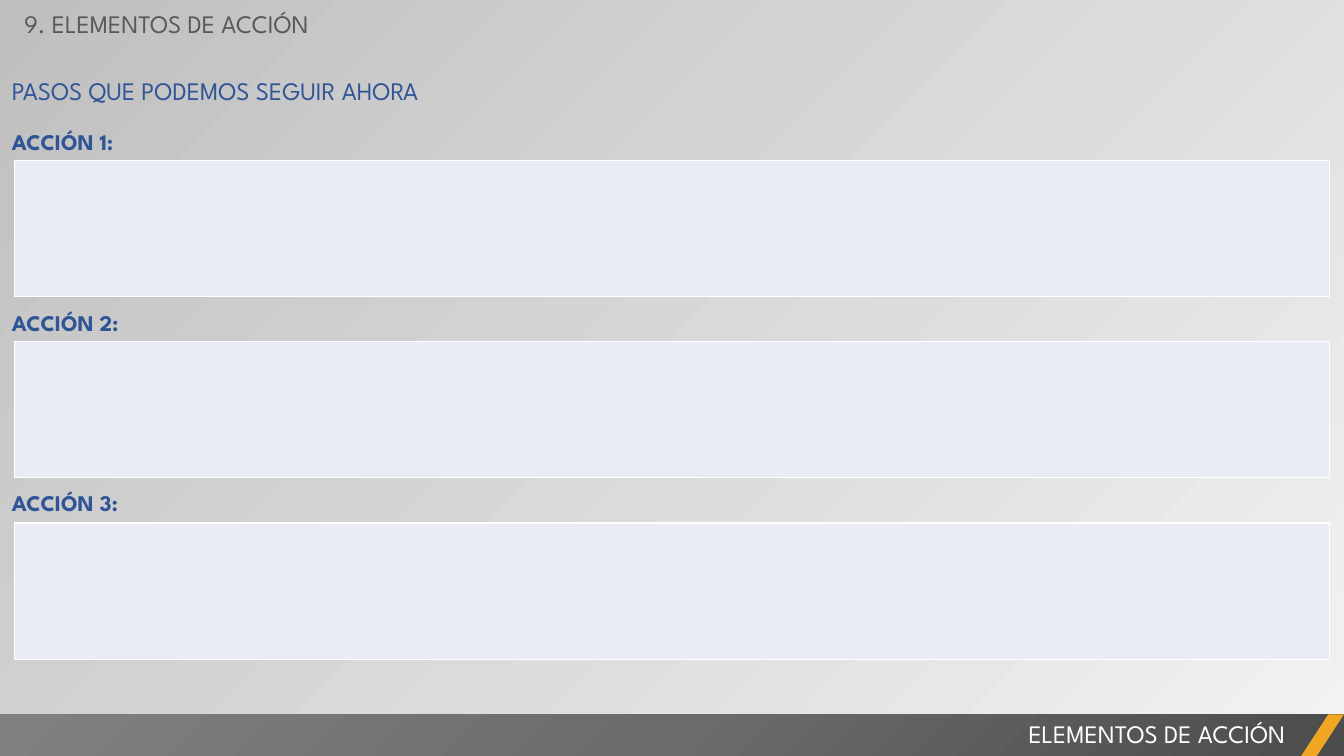
from lxml import etree
from pptx import Presentation
from pptx import util as u
from pptx.dml.color import RGBColor
from pptx.enum import shapes, text
from pptx.oxml import parse_xml
from pptx.oxml.ns import qn

# Content
HEADING = "9. ELEMENTOS DE ACCIÓN"
SUBTITLE = "PASOS QUE PODEMOS SEGUIR AHORA"
ACTIONS = ["ACCIÓN 1:", "ACCIÓN 2:", "ACCIÓN 3:"]
FOOTER = "ELEMENTOS DE ACCIÓN"

FONT = "League Spartan"
COLOURS = {
    "blue": "2F5597", "grey": "595959", "white": "FFFFFF", "orange": "F0A622",
    "cell": "E9EBF5", "back_light": "F2F2F2", "back_dark": "BFBFBF",
}
BAR_STOPS = [(0, "4C4C4C"), (50, "6B6B6B"), (100, "808080")]

# Layout in centimetres
WIDTH, HEIGHT = 33.87, 19.05
BAR_TOP, BAR_HEIGHT, SLASH_WIDTH = 18.0, 1.07, 1.09
LABEL_TOP, LABEL_STEP = 3.0, 4.55
TABLE_LEFT, TABLE_TOP, TABLE_STEP = 0.36, 4.04, 4.57
TABLE_WIDTH, TABLE_HEIGHT = 33.15, 3.43
DRAWING = "http://schemas.openxmlformats.org/drawingml/2006/main"


def colour(name):
    return RGBColor.from_string(COLOURS[name])


def place(*lengths):
    return [u.Cm(length) for length in lengths]


def add_text(page, words, area, size, ink, bold=False, spaced=False, align=text.PP_ALIGN.LEFT):
    frame = page.shapes.add_textbox(*place(*area)).text_frame
    frame.word_wrap = True
    frame.text = words
    para = frame.paragraphs[0]
    para.alignment = align
    if spaced:
        frame.margin_left = frame.margin_right = u.Cm(0.3)
        frame.margin_top = frame.margin_bottom = u.Cm(0.15)
        para.line_spacing = u.Pt(21.5)
        para.space_before = u.Pt(size * 0.2)
    font = para.runs[0].font
    font.name, font.size, font.bold = FONT, u.Pt(size), bold
    font.color.rgb = colour(ink)


def add_answer_table(page, top):
    area = place(TABLE_LEFT, top, TABLE_WIDTH, TABLE_HEIGHT)
    table = page.shapes.add_table(1, 1, *area).table
    table.first_row = table.horz_banding = False
    cell = table.cell(0, 0)
    cell.fill.solid()
    cell.fill.fore_color.rgb = colour("cell")
    properties = cell._tc.get_or_add_tcPr()
    for index, side in enumerate(("lnL", "lnR", "lnT", "lnB")):
        properties.insert(index, parse_xml(
            f'<a:{side} xmlns:a="{DRAWING}" w="12700"><a:solidFill>'
            f'<a:srgbClr val="{COLOURS["white"]}"/></a:solidFill></a:{side}>'))


def add_plain_shape(page, kind, area):
    shape = page.shapes.add_shape(kind, *place(*area))
    shape.shadow.inherit = False
    shape.line.fill.background()
    return shape


def fill_radial(shape, stops):
    """Circular gradient that starts in the bottom right corner."""
    shape.fill.gradient()
    gradient = shape._element.spPr.find(qn("a:gradFill"))
    for child in list(gradient):
        gradient.remove(child)
    stop_list = etree.SubElement(gradient, qn("a:gsLst"))
    for position, value in stops:
        stop = etree.SubElement(stop_list, qn("a:gs"), pos=str(position * 1000))
        etree.SubElement(stop, qn("a:srgbClr"), val=value)
    circle = etree.SubElement(gradient, qn("a:path"))
    circle.set("path", "circle")
    etree.SubElement(circle, qn("a:fillToRect"), l="100000", t="100000")


def main():
    deck = Presentation()
    deck.slide_width, deck.slide_height = place(WIDTH, HEIGHT)
    page = deck.slides.add_slide(deck.slide_layouts[6])

    # Background, light at the bottom right
    back = page.background.fill
    back.gradient()
    back.gradient_angle = 135
    for stop, name in zip(back.gradient_stops, ("back_light", "back_dark")):
        stop.color.rgb = colour(name)
    back.gradient_stops[0].position, back.gradient_stops[1].position = 0, 1

    # Headings
    add_text(page, HEADING, (0.36, 0.08, 13.49, 1.02), 18, "grey")
    add_text(page, SUBTITLE, (0, 1.75, 19.38, 1.04), 18, "blue", spaced=True)

    # Actions, each with an empty answer table
    for index, label in enumerate(ACTIONS):
        area = (0, LABEL_TOP + index * LABEL_STEP, 19.38, 1.02)
        add_text(page, label, area, 16, "blue", bold=True, spaced=True)
        add_answer_table(page, TABLE_TOP + index * TABLE_STEP)

    # Footer bar with slash
    bar = add_plain_shape(page, shapes.MSO_SHAPE.RECTANGLE, (0, BAR_TOP, WIDTH, BAR_HEIGHT))
    fill_radial(bar, BAR_STOPS)
    add_text(page, FOOTER, (13.34, 17.98, 19.3, 1.02), 18, "white", align=text.PP_ALIGN.RIGHT)
    slash = add_plain_shape(page, shapes.MSO_SHAPE.PARALLELOGRAM,
                            (WIDTH - SLASH_WIDTH, BAR_TOP, SLASH_WIDTH, BAR_HEIGHT))
    slash.adjustments[0] = 0.65
    slash.fill.solid()
    slash.fill.fore_color.rgb = colour("orange")

    deck.save("out.pptx")


if __name__ == "__main__":
    main()
